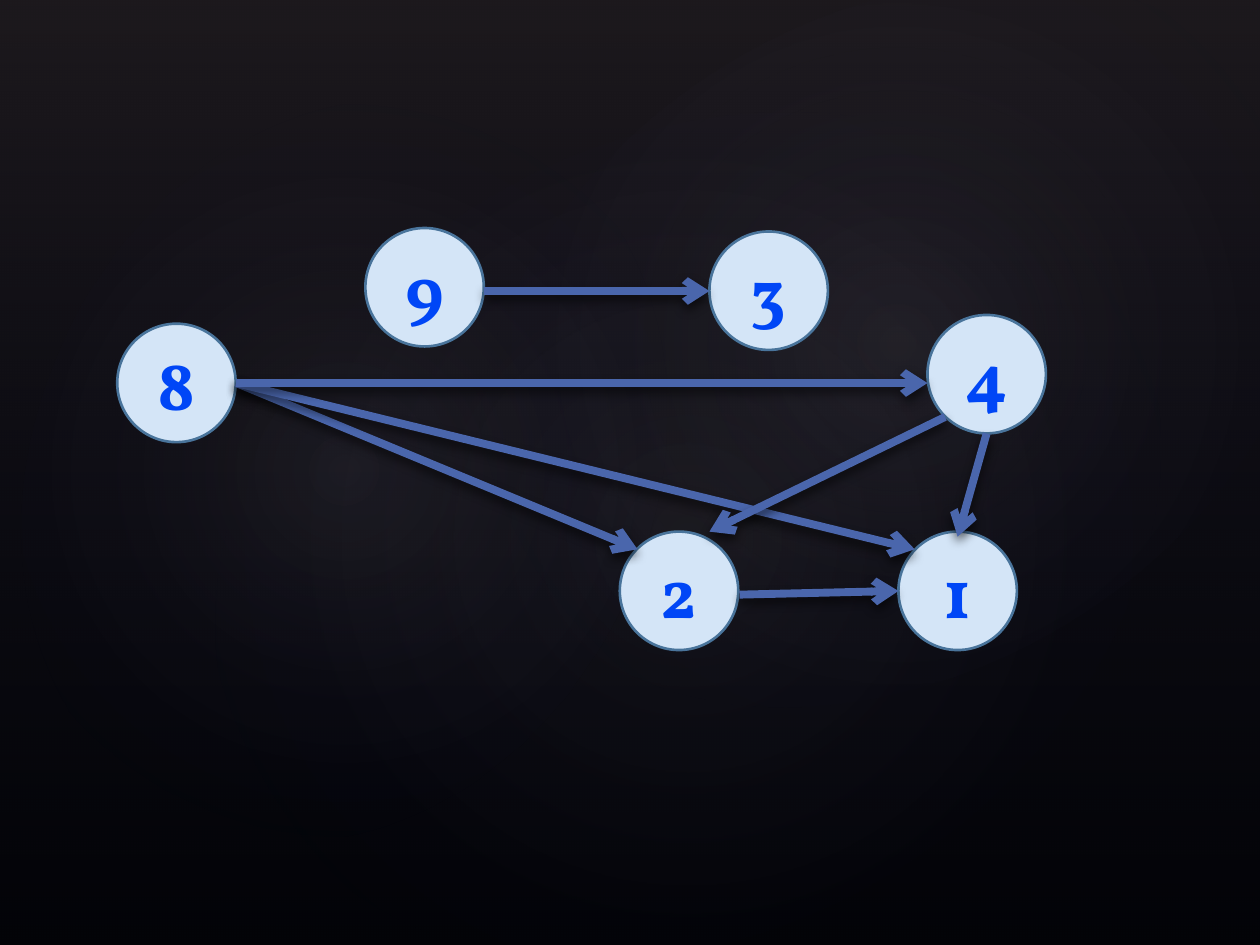
from pptx import Presentation
from pptx.dml.color import RGBColor
from pptx.enum.shapes import MSO_CONNECTOR, MSO_SHAPE
from pptx.enum.text import MSO_ANCHOR, PP_ALIGN
from pptx.oxml import parse_xml
from pptx.oxml.ns import nsdecls, qn
from pptx.util import Pt

BLACK = RGBColor(0x00, 0x00, 0x00)
TAUPE = RGBColor(0x50, 0x46, 0x52)
NAVY = RGBColor(0x24, 0x28, 0x52)
MIST = RGBColor(0xC4, 0xBC, 0xC6)
NODE_FILL = RGBColor(0xD4, 0xE5, 0xF7)
NODE_LINE = RGBColor(0x49, 0x74, 0x9B)
NODE_TEXT = RGBColor(0x00, 0x46, 0xF6)
EDGE_LINE = RGBColor(0x4A, 0x66, 0xAC)

SLIDE_BOX = (0, 0, 720, 540)
NODE_SIZE = 67.7
LINEAR = '<a:lin ang="5400000" scaled="0"/>'
RADIAL = ('<a:path path="circle"><a:fillToRect l="50000" t="50000" '
          'r="50000" b="50000"/></a:path>')

# Left, top, width, height, rotation and centre opacity of each glow
GLOWS = [
    (108, 82.1, 570.2, 449.3, 328.7, 7),
    (-21.6, 92.2, 436.3, 352.8, 294.3, 8),
    (257.8, 9.4, 510.5, 374.4, 328.7, 8),
]

# Left and top of each node
NODES = {
    "8": (67, 185),
    "9": (208.8, 130.3),
    "3": (405.4, 132.3),
    "4": (530, 180),
    "2": (354.2, 303.8),
    "1": (513.4, 303.8),
}

# Start and end of each arrow
NODE_8_RIGHT = (135, 218.9)
EDGES = [
    (NODE_8_RIGHT, (364.3, 313.9)),
    ((276.5, 166.3), (405.4, 166.3)),
    (NODE_8_RIGHT, (522.7, 313.9)),
    (NODE_8_RIGHT, (530, 218.9)),
    ((540, 238.3), (405.4, 303.8)),
    ((563.8, 247.7), (547.2, 306.7)),
    ((422.6, 339.8), (513.4, 337.7)),
]


def write_text(shape, text, *, font, size, color, bold=False):
    frame = shape.text_frame
    frame.vertical_anchor = MSO_ANCHOR.MIDDLE
    paragraph = frame.paragraphs[0]
    paragraph.alignment = PP_ALIGN.CENTER
    run = paragraph.add_run()
    run.text = text
    run.font.name = font
    run.font.size = Pt(size)
    run.font.bold = bold
    run.font.color.rgb = color


def add_plain_shape(slide, kind, left, top, width, height):
    shape = slide.shapes.add_shape(kind, Pt(left), Pt(top), Pt(width), Pt(height))
    shape.shadow.inherit = False
    return shape


def fill_gradient(shape, stops, direction):
    """Fill with (position, color, opacity) stops, in percent."""
    stop_xml = "".join(
        f'<a:gs pos="{position * 1000}"><a:srgbClr val="{color}">'
        f'<a:alpha val="{opacity * 1000}"/></a:srgbClr></a:gs>'
        for position, color, opacity in stops
    )
    gradient = parse_xml(
        f'<a:gradFill {nsdecls("a")} rotWithShape="1">'
        f"<a:gsLst>{stop_xml}</a:gsLst>{direction}</a:gradFill>"
    )
    shape.line.fill.background()
    shape.fill.background()
    properties = shape._element.spPr
    properties.replace(properties.find(qn("a:noFill")), gradient)


def add_backdrop(slide, box):
    left, top, width, height = box
    slide.background.fill.solid()
    slide.background.fill.fore_color.rgb = BLACK

    # Vertical shade over the whole box
    shade = add_plain_shape(slide, MSO_SHAPE.RECTANGLE, left, top, width, height)
    fill_gradient(shade, [(0, TAUPE, 36), (100, NAVY, 10)], LINEAR)

    # Soft glows
    for x, y, glow_width, glow_height, rotation, opacity in GLOWS:
        glow = add_plain_shape(slide, MSO_SHAPE.OVAL, left + x, top + y,
                               glow_width, glow_height)
        glow.rotation = rotation
        fill_gradient(glow, [(0, MIST, opacity), (58, NAVY, 0)], RADIAL)


def add_node(slide, label, left, top):
    node = add_plain_shape(slide, MSO_SHAPE.OVAL, left, top, NODE_SIZE, NODE_SIZE)
    node.fill.solid()
    node.fill.fore_color.rgb = NODE_FILL
    node.line.color.rgb = NODE_LINE
    node.line.width = Pt(1.5)
    write_text(node, label, font="Vollkorn", size=40, color=NODE_TEXT, bold=True)


def add_edge(slide, start_x, start_y, end_x, end_y):
    edge = slide.shapes.add_connector(
        MSO_CONNECTOR.STRAIGHT, Pt(start_x), Pt(start_y), Pt(end_x), Pt(end_y))
    edge.line.color.rgb = EDGE_LINE
    edge.line.width = Pt(4.5)
    # Arrowhead and drop shadow
    edge.line._get_or_add_ln().append(
        parse_xml(f'<a:tailEnd {nsdecls("a")} type="arrow"/>'))
    edge._element.spPr.append(parse_xml(
        f'<a:effectLst {nsdecls("a")}>'
        f'<a:outerShdw blurRad="{Pt(6)}" dist="{Pt(3)}" dir="5400000" '
        f'rotWithShape="0"><a:srgbClr val="{BLACK}"><a:alpha val="60000"/>'
        '</a:srgbClr></a:outerShdw></a:effectLst>'))


def add_graph(slide, box):
    left, top = box[:2]
    for label, (x, y) in NODES.items():
        add_node(slide, label, left + x, top + y)
    for (start_x, start_y), (end_x, end_y) in EDGES:
        add_edge(slide, left + start_x, top + start_y, left + end_x, top + end_y)


def main():
    presentation = Presentation()
    presentation.slide_width = Pt(SLIDE_BOX[2])
    presentation.slide_height = Pt(SLIDE_BOX[3])
    slide = presentation.slides.add_slide(presentation.slide_layouts[6])
    add_backdrop(slide, SLIDE_BOX)
    add_graph(slide, SLIDE_BOX)
    presentation.save("out.pptx")


if __name__ == "__main__":
    main()
